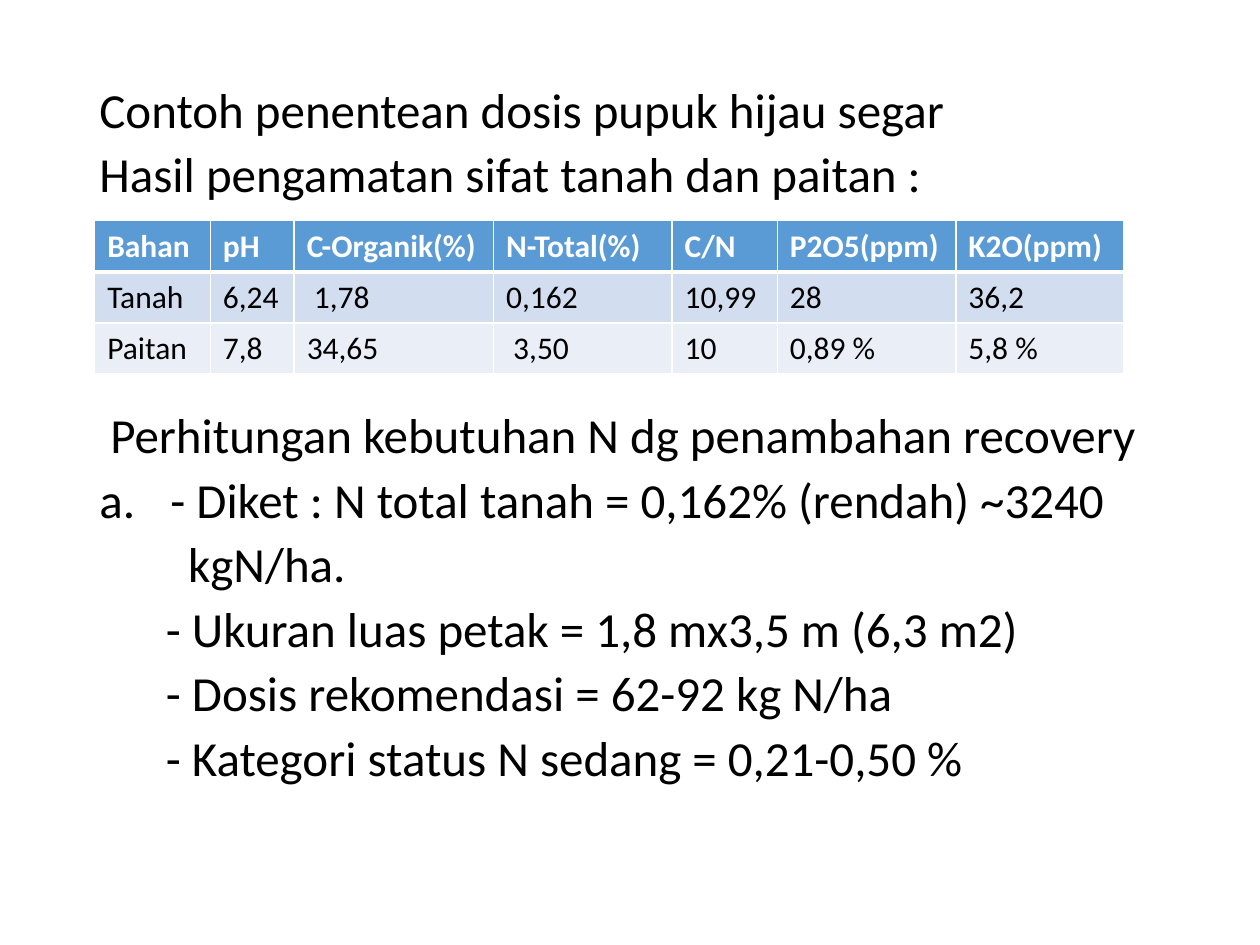
from lxml import etree
from pptx import Presentation
from pptx import util as u
from pptx.dml.color import RGBColor
from pptx.enum import text
from pptx.oxml import ns

FONT = "Calibri"
GAP = 10
TABLE_GAP = 122
LINES = [
    ("Contoh penentean dosis pupuk hijau segar", 0, GAP, None),
    ("Hasil pengamatan sifat tanah dan paitan :", 0, GAP, None),
    ("Perhitungan kebutuhan N dg penambahan recovery", 0.22, TABLE_GAP, None),
    ("- Diket : N total tanah = 0,162% (rendah) ~3240", 1.43, GAP, "alphaLcPeriod"),
    ("kgN/ha.", 1.79, GAP, None),
    ("- Ukuran luas petak = 1,8 mx3,5 m (6,3 m2)", 1.34, GAP, None),
    ("- Dosis rekomendasi = 62-92 kg N/ha", 1.34, GAP, None),
    ("- Kategori status N sedang = 0,21-0,50 %", 1.34, GAP, None),
]
ROWS = [
    ("Bahan", "pH", "C-Organik(%)", "N-Total(%)", "C/N", "P2O5(ppm)", "K2O(ppm)"),
    ("Tanah", "6,24", " 1,78", "0,162", "10,99", "28", "36,2"),
    ("Paitan", "7,8", "34,65", " 3,50", "10", "0,89 %", "5,8 %"),
]
COLS = [2.33, 1.69, 4.02, 3.6, 2.12, 3.6, 3.39]
ROW_H = 1.03
FILLS = ["5B9BD5", "D2DEEF", "EAEFF7"]


def colour(target, value):
    target.rgb = RGBColor.from_string(value)


def style(p, size, value, bold=False):
    p.font.name = FONT
    p.font.size = u.Pt(size)
    p.font.bold = bold
    colour(p.font.color, value)


def child(parent, tag, **attrs):
    return etree.SubElement(parent, ns.qn(tag), **attrs)


def indent(p, left, numbering):
    pPr = p._p.get_or_add_pPr()
    margin = u.Cm(left)
    pPr.set("marL", str(margin))
    pPr.set("indent", str(-margin if numbering else 0))
    if numbering:
        child(pPr, "a:buFont", typeface=FONT)
        child(pPr, "a:buAutoNum", type=numbering)
    else:
        child(pPr, "a:buNone")


def border(cell, side, width):
    ln = child(cell._tc.get_or_add_tcPr(), f"a:ln{side}", w=str(u.Pt(width)))
    child(child(ln, "a:solidFill"), "a:srgbClr", val="FFFFFF")


prs = Presentation()
prs.slide_width, prs.slide_height = u.Cm(25.4), u.Cm(19.05)
s = prs.slides.add_slide(prs.slide_layouts[1])
title = s.shapes.title
title.element.getparent().remove(title.element)

body = s.placeholders[1]
body.left, body.top = u.Cm(1.75), u.Cm(1.7)
body.width, body.height = u.Cm(22.8), u.Cm(15.47)
tf = body.text_frame
tf.auto_size = text.MSO_AUTO_SIZE.NONE
for i, (line, left, before, numbering) in enumerate(LINES):
    p = tf.add_paragraph() if i else tf.paragraphs[0]
    p.text = line
    p.line_spacing = 0.8
    p.space_before = u.Pt(before)
    indent(p, left, numbering)
    style(p, 28, "000000")

frame = s.shapes.add_table(len(ROWS), len(COLS), u.Cm(1.91), u.Cm(4.45),
                           u.Cm(sum(COLS)), u.Cm(ROW_H * len(ROWS)))
table = frame.table
for column, width in zip(table.columns, COLS):
    column.width = u.Cm(width)
for r, values in enumerate(ROWS):
    table.rows[r].height = u.Cm(ROW_H)
    for c, value in enumerate(values):
        cell = table.cell(r, c)
        cell.text = value
        style(cell.text_frame.paragraphs[0], 18, "000000" if r else "FFFFFF", r == 0)
        for side in "LRTB":
            thick = (r, side) in ((0, "B"), (1, "T"))
            border(cell, side, 3 if thick else 1)
        cell.fill.solid()
        colour(cell.fill.fore_color, FILLS[r])

prs.save("out.pptx")
